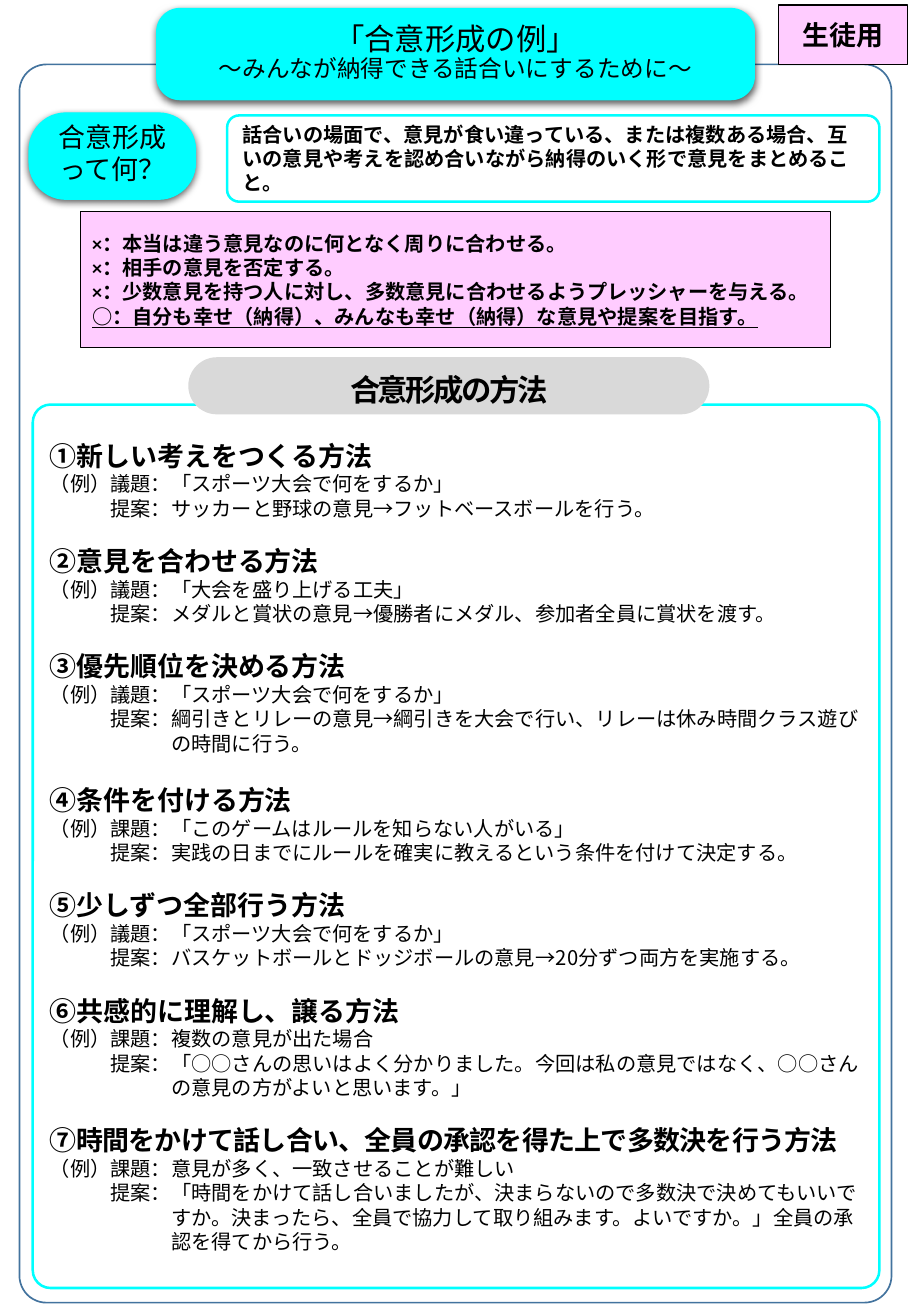
from dataclasses import dataclass

from lxml import etree
from pptx import Presentation
from pptx.dml.color import RGBColor
from pptx.enum.shapes import MSO_SHAPE
from pptx.enum.text import MSO_ANCHOR, MSO_AUTO_SIZE, PP_ALIGN
from pptx.oxml.ns import qn
from pptx.util import Inches, Pt

RECTANGLE, ROUNDED = MSO_SHAPE.RECTANGLE, MSO_SHAPE.ROUNDED_RECTANGLE
LEFT, CENTER = PP_ALIGN.LEFT, PP_ALIGN.CENTER
MIDDLE, NO_AUTOFIT = MSO_ANCHOR.MIDDLE, MSO_AUTO_SIZE.NONE


@dataclass(frozen=True)
class Theme:
    ink: str = "000000"
    paper: str = "FFFFFF"
    cyan: str = "00FFFF"
    pink: str = "FFCCFF"
    gray: str = "D9D9D9"
    navy: str = "43739E"
    font: str = "Noto Sans CJK JP"
    latin: str = "Calibri"
    title: int = 18
    heading: int = 16
    subtitle: int = 14
    body: int = 12
    leading: float = 1.2


THEME = Theme()

RULES = [
    "×：本当は違う意見なのに何となく周りに合わせる。",
    "×：相手の意見を否定する。",
    "×：少数意見を持つ人に対し、多数意見に合わせるようプレッシャーを与える。",
    "○：自分も幸せ（納得）、みんなも幸せ（納得）な意見や提案を目指す。",
]

# Heading, topic, proposal
METHODS = [
    ("①新しい考えをつくる方法", "議題：「スポーツ大会で何をするか」",
     "サッカーと野球の意見→フットベースボールを行う。"),
    ("②意見を合わせる方法", "議題：「大会を盛り上げる工夫」",
     "メダルと賞状の意見→優勝者にメダル、参加者全員に賞状を渡す。"),
    ("③優先順位を決める方法", "議題：「スポーツ大会で何をするか」",
     "綱引きとリレーの意見→綱引きを大会で行い、リレーは休み時間クラス遊び\v"
     "の時間に行う。"),
    ("④条件を付ける方法", "課題：「このゲームはルールを知らない人がいる」",
     "実践の日までにルールを確実に教えるという条件を付けて決定する。"),
    ("⑤少しずつ全部行う方法", "議題：「スポーツ大会で何をするか」",
     "バスケットボールとドッジボールの意見→20分ずつ両方を実施する。"),
    ("⑥共感的に理解し、譲る方法", "課題：複数の意見が出た場合",
     "「○○さんの思いはよく分かりました。今回は私の意見ではなく、○○さん\v"
     "の意見の方がよいと思います。」"),
    ("⑦時間をかけて話し合い、全員の承認を得た上で多数決を行う方法",
     "課題：意見が多く、一致させることが難しい",
     "「時間をかけて話し合いましたが、決まらないので多数決で決めてもいいで\v"
     "すか。決まったら、全員で協力して取り組みます。よいですか。」全員の承\v"
     "認を得てから行う。"),
]


def add_panel(page, area, kind=ROUNDED, corner=None, fill=None, line=None,
              width=0.75, shadow=False):
    panel = page.shapes.add_shape(kind, *map(Inches, area))
    panel.shadow.inherit = False
    if corner is not None:
        panel.adjustments[0] = corner
    if fill:
        panel.fill.solid()
        panel.fill.fore_color.rgb = RGBColor.from_string(fill)
    else:
        panel.fill.background()
    if line:
        panel.line.color.rgb = RGBColor.from_string(line)
        panel.line.width = Pt(width)
    else:
        panel.line.fill.background()
    if shadow:
        effects = panel.element.spPr.find(qn("a:effectLst"))
        outer = etree.SubElement(effects, qn("a:outerShdw"), blurRad=str(Pt(4.5)),
                                 dist=str(Pt(1.5)), dir="5400000", rotWithShape="0")
        color = etree.SubElement(outer, qn("a:srgbClr"), val=THEME.ink)
        etree.SubElement(color, qn("a:alpha"), val="63000")
    return panel


def prepare_frame(box, left=0.1, top=0.05, right=0.1, bottom=0.05):
    frame = box.text_frame
    frame.word_wrap = True
    frame.auto_size = NO_AUTOFIT
    frame.vertical_anchor = MIDDLE
    frame.margin_left, frame.margin_right = Inches(left), Inches(right)
    frame.margin_top, frame.margin_bottom = Inches(top), Inches(bottom)
    return frame


def write(frame, text, size=THEME.body, bold=False, underline=False, align=LEFT,
          spacing=None, before=0, indent=0, hanging=0, tracking=0, latin=THEME.font):
    first = frame.paragraphs[0]
    para = first if not first.text else frame.add_paragraph()
    para.text = text
    para.alignment = align
    para.line_spacing = spacing or Pt(size * THEME.leading)
    para.space_before, para.space_after = Pt(before), Pt(0)
    properties = para._p.get_or_add_pPr()
    properties.set("marL", str(Inches(indent)))
    properties.set("indent", str(-Inches(hanging)))
    etree.SubElement(properties, qn("a:buNone"))
    for span in para.runs:
        font = span.font
        font.size, font.bold, font.name = Pt(size), bold, latin
        font.underline = underline
        font.color.rgb = RGBColor.from_string(THEME.ink)
        span_properties = span._r.get_or_add_rPr()
        span_properties.set("spc", str(round(tracking * 100)))
        etree.SubElement(span_properties, qn("a:ea"), typeface=THEME.font)


def place_placeholder(page, holder, area):
    holder.left, holder.top, holder.width, holder.height = map(Inches, area)
    page.shapes.element.append(holder.element)  # bring above its panel


def add_methods(page, area):
    add_panel(page, area, corner=0.021, fill=THEME.paper, line=THEME.cyan, width=1.5)
    body = page.placeholders[1]
    place_placeholder(page, body, area)
    frame = prepare_frame(body, left=0.14, right=0.1)
    for number, (heading, topic, proposal) in enumerate(METHODS):
        gap_size = 0 if number == 0 else THEME.subtitle if number == 3 else THEME.body
        write(frame, heading, size=THEME.heading, bold=True,
              before=gap_size * THEME.leading,
              tracking=-0.4 if number == len(METHODS) - 1 else 0)
        write(frame, "（例）" + topic)
        write(frame, "提案：" + proposal, indent=1, hanging=0.5)


def add_banner(page, area):
    add_panel(page, area, corner=0.256, fill=THEME.cyan, line=THEME.cyan, shadow=True)
    title = page.shapes.title
    place_placeholder(page, title, area)
    frame = prepare_frame(title, top=0)
    write(frame, "「合意形成の例」", size=THEME.title, align=CENTER, spacing=1.0)
    write(frame, "～みんなが納得できる話合いにするために～", size=THEME.subtitle,
          align=CENTER, spacing=Pt(15))


def add_definition(page, left, top, height):
    question = add_panel(page, (left, top, 1.37, height), corner=0.427,
                         fill=THEME.cyan, line=THEME.cyan, shadow=True)
    frame = prepare_frame(question)
    write(frame, "合意形成", size=THEME.heading, align=CENTER, spacing=Pt(15))
    write(frame, "って何？", size=THEME.heading, align=CENTER)
    answer = add_panel(page, (left + 1.63, top + 0.02, 5.37, height), corner=0.139,
                       fill=THEME.paper, line=THEME.cyan, width=1.5)
    write(prepare_frame(answer),
          "話合いの場面で、意見が食い違っている、または複数ある場合、互いの意見や考えを"
          "認め合いながら納得のいく形で意見をまとめること。", bold=True)


def add_rules(page, area):
    box = add_panel(page, area, kind=RECTANGLE, fill=THEME.pink, line=THEME.ink)
    frame = prepare_frame(box)
    for rule in RULES:
        write(frame, rule, bold=True, underline=rule.startswith("○"), latin=THEME.latin)


def add_section_heading(page, area):
    box = add_panel(page, area, corner=0.5, fill=THEME.gray)
    write(prepare_frame(box), "合意形成の方法", size=THEME.title, bold=True,
          align=CENTER, spacing=1.2, tracking=-1.5)


def add_audience_tag(page, area):
    box = add_panel(page, area, kind=RECTANGLE, fill=THEME.pink, line=THEME.ink)
    write(prepare_frame(box), "生徒用", size=THEME.heading, bold=True, align=CENTER,
          latin=THEME.latin)


def main():
    deck = Presentation()
    deck.slide_width, deck.slide_height = Inches(7.5), Inches(10.83)
    page = deck.slides.add_slide(deck.slide_layouts[1])
    # Page border
    add_panel(page, (0.16, 0.53, 7.18, 10.19), corner=0.031, line=THEME.navy, width=1)
    # Regions, from back to front
    add_methods(page, (0.27, 3.33, 6.97, 7.27))
    add_banner(page, (1.29, 0.07, 4.92, 0.75))
    add_definition(page, left=0.24, top=0.93, height=0.71)
    add_rules(page, (0.66, 1.74, 6.18, 1.12))
    add_section_heading(page, (1.55, 2.94, 4.29, 0.47))
    add_audience_tag(page, (6.41, 0.04, 1.06, 0.49))
    deck.save("out.pptx")


if __name__ == "__main__":
    main()
